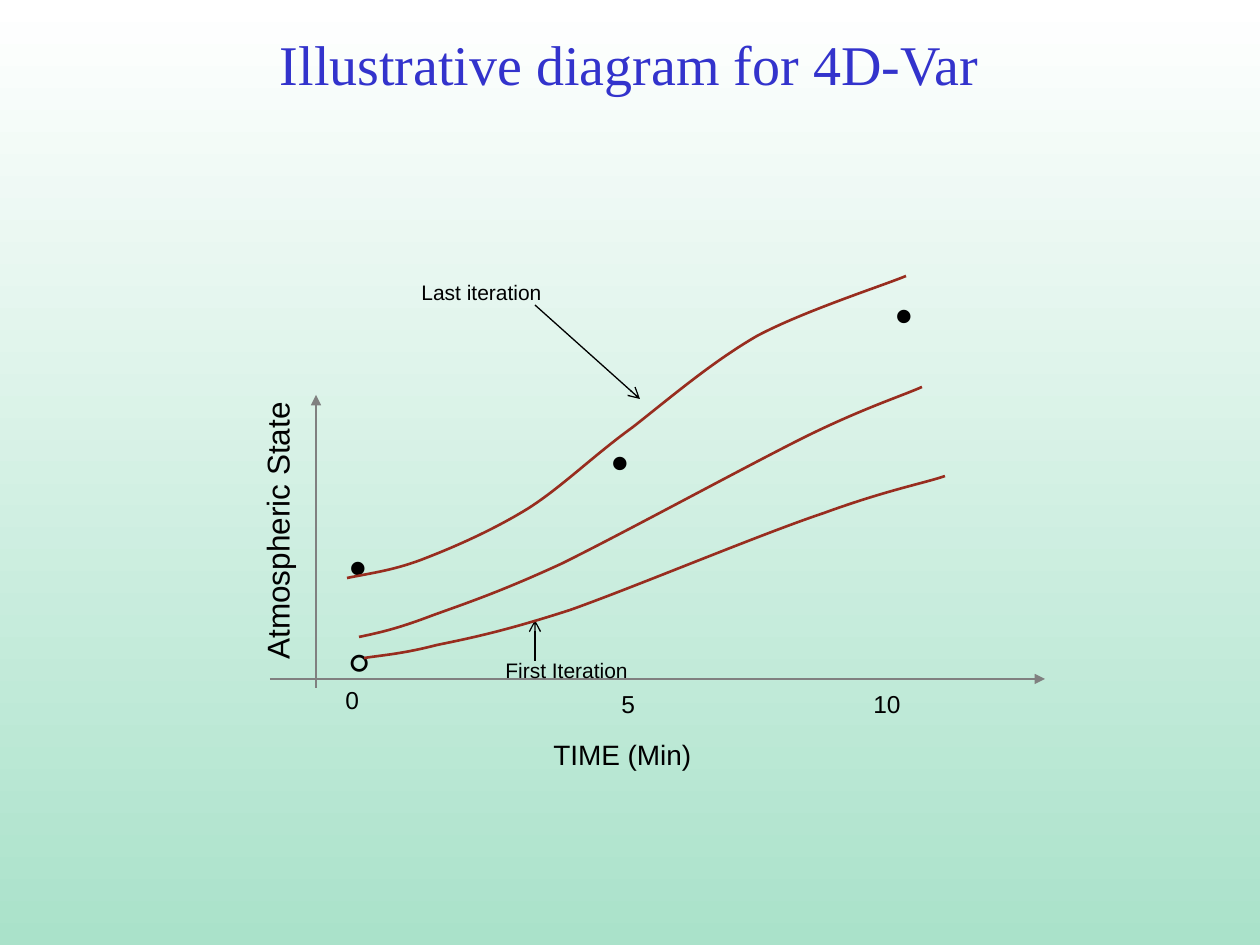
from pptx import Presentation
from pptx import util as u
from pptx.dml.color import RGBColor
from pptx.enum import shapes, text
from pptx.oxml.ns import qn
from lxml import etree

PX = 914400 / 126  # EMU in one px
SERIF, SANS = "Times New Roman", "Arial"
BLACK, GRAY, RED, BLUE = "000000", "808080", "982D1F", "3333CC"
SKY = ["AAE2CA", "FFFFFF"]  # bottom, top

TITLE = ("Illustrative diagram for 4D-Var", (94, 0, 1071, 126))

# Words, box, size, font, turn
DOTS = [
    ("°", (336, 630, 48, 79), 32, SERIF, 0),
    ("•", (336, 525, 45, 79), 32, SERIF, 0),
    ("•", (598, 420, 45, 79), 32, SERIF, 0),
    ("•", (882, 273, 69, 79), 32, SERIF, 0),
]
LABELS = [
    ("Last iteration", (409, 273, 148, 38), 12, SANS, 0),
    ("First Iteration", (493, 651, 149, 38), 12, SANS, 0),
    ("TIME (Min)", (541, 731, 164, 47), 16, SANS, 0),
    ("Atmospheric State", (135, 505, 284, 50), 18, SANS, 270),
    ("0", (333, 679, 39, 42), 14, SANS, 0),
    ("5", (609, 683, 39, 42), 14, SANS, 0),
    ("10", (861, 683, 53, 42), 14, SANS, 0),
]

# From, to, colour, arrowhead
ARROWS = [
    ((535, 305), (640, 399), BLACK, "arrow"),
    ((535, 661), (535, 620), BLACK, "arrow"),
    ((316, 688), (316, 395), GRAY, "triangle"),
    ((270, 679), (1045, 679), GRAY, "triangle"),
]

# Bezier points: a start, then three for each span
CURVES = [
    [(347, 578), (372, 573), (396, 570), (426, 558), (457, 546), (495, 529),
     (529, 508), (563, 486), (593, 456), (633, 427), (670, 398), (712, 362),
     (757, 336), (804, 311), (882, 286), (906, 276)],
    [(359, 637), (378, 633), (397, 629), (431, 616), (464, 604), (498, 593),
     (561, 564), (622, 534), (745, 467), (805, 437), (864, 408), (902, 396),
     (922, 387)],
    [(364, 658), (383, 655), (402, 654), (437, 645), (471, 638), (505, 631),
     (570, 610), (635, 587), (761, 534), (824, 513), (887, 490), (925, 483),
     (945, 476)],
]


def emu(*vals):
    return [round(v * PX) for v in vals]


def rgb(code):
    return RGBColor.from_string(code)


def put(obj, vals):
    for key, val in vals.items():
        setattr(obj, key, val)


def write(shape, words, size, font, color):
    para = shape.text_frame.paragraphs[0]
    run = para.add_run()
    run.text = words
    put(run.font, {"size": u.Pt(size), "name": font})
    run.font.color.rgb = rgb(color)
    return para


def stroke(shape, color, width):
    shape.line.color.rgb = rgb(color)
    shape.line.width = u.Pt(width)


def label(slide, words, box, size, font, turn):
    shape = slide.shapes.add_textbox(*emu(*box))
    shape.rotation = turn
    put(shape.text_frame, {"word_wrap": False,
                           "auto_size": text.MSO_AUTO_SIZE.SHAPE_TO_FIT_TEXT})
    write(shape, words, size, font, BLACK)


def arrow(slide, start, end, color, head):
    line = slide.shapes.add_connector(
        shapes.MSO_CONNECTOR.STRAIGHT, *emu(*start, *end))
    stroke(line, color, 0.75)
    etree.SubElement(line.line._get_or_add_ln(), qn("a:tailEnd"), type=head)
    etree.SubElement(line._element.spPr, qn("a:effectLst"))


def curve(slide, pts):
    pen = slide.shapes.build_freeform(*pts[0], scale=PX)
    pen.add_line_segments(pts[1:], close=False)
    shape = pen.convert_to_shape()
    shape.shadow.inherit = False
    shape.fill.background()
    stroke(shape, RED, 1.5)
    # Join each three straight pieces into one cubic span
    legs = list(shape._element.iter(qn("a:lnTo")))
    for i in range(0, len(legs), 3):
        span = etree.Element(qn("a:cubicBezTo"))
        legs[i].addprevious(span)
        for leg in legs[i:i + 3]:
            span.append(leg[0])
            leg.getparent().remove(leg)


def main():
    deck = Presentation()
    put(deck, dict(zip(("slide_width", "slide_height"), emu(1260, 945))))
    slide = deck.slides.add_slide(deck.slide_layouts[5])

    # Background
    fill = slide.background.fill
    fill.gradient()
    fill.gradient_angle = 90
    for stop, color, pos in zip(fill.gradient_stops, SKY, (0, 1)):
        stop.color.rgb = rgb(color)
        stop.position = pos

    # Title
    words, box = TITLE
    title = slide.shapes.title
    put(title, dict(zip(("left", "top", "width", "height"), emu(*box))))
    title.text_frame.vertical_anchor = text.MSO_ANCHOR.MIDDLE
    para = write(title, words, 32, SERIF, BLUE)
    para.alignment = text.PP_ALIGN.CENTER

    # Diagram, back to front
    for draw, items in ((label, DOTS), (arrow, ARROWS), (label, LABELS)):
        for item in items:
            draw(slide, *item)
    for pts in CURVES:
        curve(slide, pts)

    deck.save("out.pptx")


if __name__ == "__main__":
    main()
